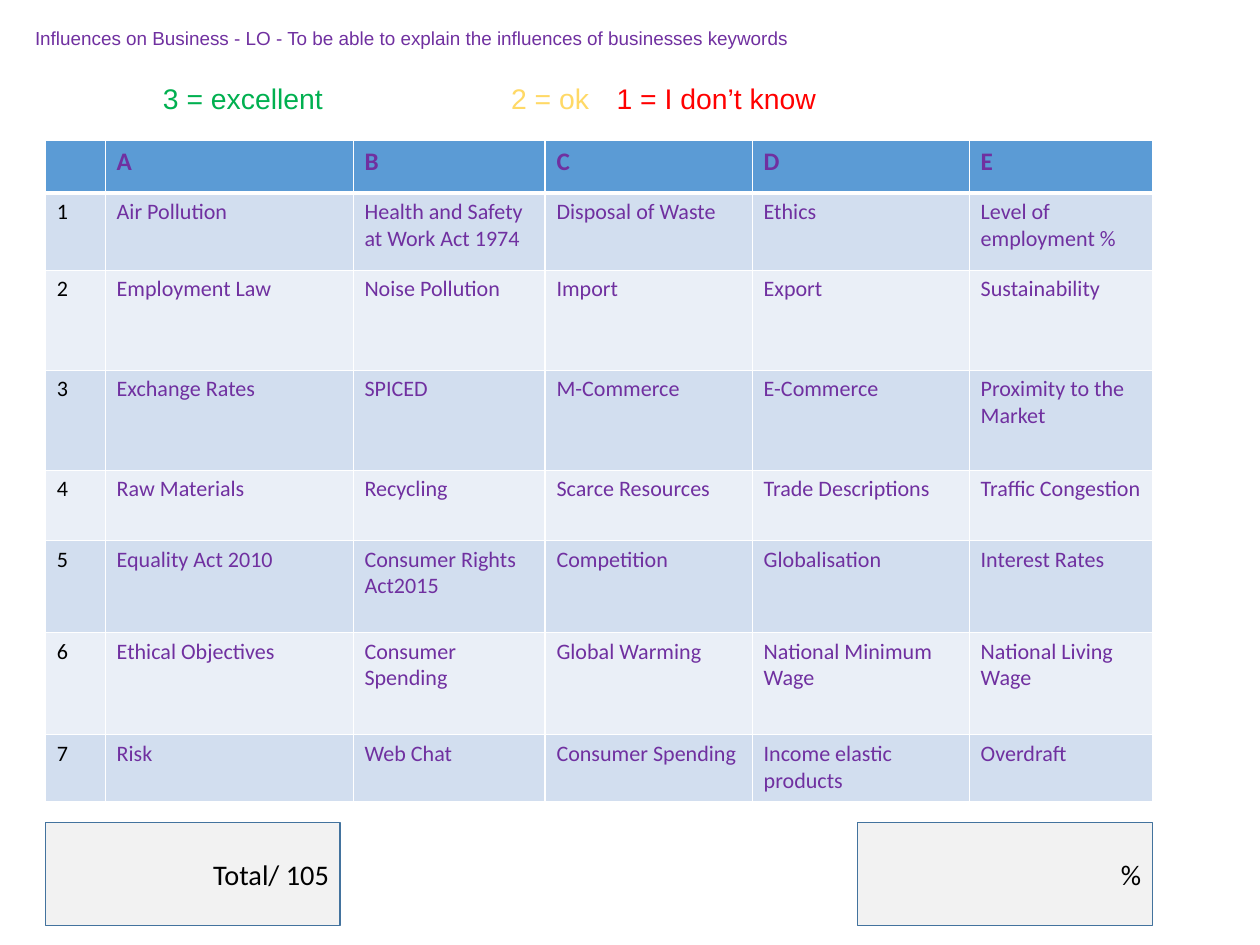
from dataclasses import dataclass

from lxml import etree
from pptx import Presentation
from pptx.dml.color import RGBColor
from pptx.enum.shapes import MSO_SHAPE
from pptx.enum.text import MSO_ANCHOR, MSO_AUTO_SIZE, PP_ALIGN
from pptx.oxml.ns import qn
from pptx.util import Cm, Pt

RECT = MSO_SHAPE.RECTANGLE
TOP, MIDDLE = MSO_ANCHOR.TOP, MSO_ANCHOR.MIDDLE
LEFT, RIGHT = PP_ALIGN.LEFT, PP_ALIGN.RIGHT
NO_FIT = MSO_AUTO_SIZE.NONE


@dataclass(frozen=True)
class Theme:
    heading_font: str = "Arial"
    body_font: str = "Calibri"
    purple: str = "7030A0"
    black: str = "000000"
    green: str = "00B050"
    yellow: str = "FFD966"
    red: str = "FF0000"
    white: str = "FFFFFF"
    header: str = "5B9BD5"
    bands: tuple = ("D2DEEF", "EAEFF7")
    box: str = "F2F2F2"
    box_line: str = "43739E"
    title_size: int = 12
    cell_size: int = 14
    header_size: int = 16
    large_size: int = 18


T = Theme()

# Content
TITLE = "Influences on Business - LO - To be able to explain the influences of businesses keywords"
SCORES = [
    ("3 = excellent\t\t ", T.green),
    ("2 = ok \t", T.yellow),
    ("1 = I don’t know", T.red),
]
KEYWORDS = [
    ("", "A", "B", "C", "D", "E"),
    ("1", "Air Pollution", "Health and Safety at Work Act 1974", "Disposal of Waste",
     "Ethics", "Level of employment %"),
    ("2", "Employment Law", "Noise Pollution", "Import", "Export", "Sustainability"),
    ("3", "Exchange Rates", "SPICED", "M-Commerce", "E-Commerce", "Proximity to the Market"),
    ("4", "Raw Materials", "Recycling", "Scarce Resources", "Trade Descriptions",
     "Traffic Congestion"),
    ("5", "Equality Act 2010", "Consumer Rights Act2015", "Competition", "Globalisation",
     "Interest Rates"),
    ("6", "Ethical Objectives", "Consumer Spending", "Global Warming",
     "National Minimum Wage", "National Living Wage"),
    ("7", "Risk", "Web Chat", "Consumer Spending", "Income elastic products", "Overdraft"),
]
RESULTS = ["Total/ 105", "%"]

# Layout in centimetres
COL_WIDTHS = [1.34, 5.55, 4.3, 4.64, 4.86, 4.1]
ROW_HEIGHTS = [1.17, 1.73, 2.24, 2.24, 1.57, 2.06, 2.29, 1.5]
TABLE_LEFT, TABLE_TOP = 1.02, 3.15
TABLE_WIDTH, TABLE_HEIGHT = sum(COL_WIDTHS), sum(ROW_HEIGHTS)
BOX_WIDTH, BOX_HEIGHT, BOX_TOP = 6.6, 2.31, 18.42
SCORE_TABS = [5.08, 7.62, 10.16]


def add_run(p, text, font, size, color, bold=False):
    r = p.add_run()
    r.text = text
    r.font.name, r.font.size, r.font.bold = font, Pt(size), bold
    r.font.color.rgb = RGBColor.from_string(color)


def add_tabs(p, stops):
    tabs = etree.SubElement(p._p.get_or_add_pPr(), qn("a:tabLst"))
    for stop in stops:
        etree.SubElement(tabs, qn("a:tab"), pos=str(Cm(stop)), algn="l")


def add_borders(cell, top, bottom):
    tcPr = cell._tc.get_or_add_tcPr()
    for side, width in (("L", 1), ("R", 1), ("T", top), ("B", bottom)):
        line = etree.SubElement(tcPr, qn(f"a:ln{side}"), w=str(Pt(width)))
        fill = etree.SubElement(line, qn("a:solidFill"))
        etree.SubElement(fill, qn("a:srgbClr"), val=T.white)


def add_title(s):
    sp = s.shapes.title
    sp.left, sp.top, sp.width, sp.height = Cm(0.53), Cm(0.48), Cm(22.86), Cm(0.77)
    tf = sp.text_frame
    tf.auto_size, tf.vertical_anchor, tf.word_wrap = NO_FIT, TOP, True
    p = tf.paragraphs[0]
    p.alignment = LEFT
    add_run(p, TITLE, T.heading_font, T.title_size, T.purple)


def add_scores(s):
    sp = s.shapes.add_textbox(Cm(3.4), Cm(1.7), Cm(21.39), Cm(1.02))
    sp.text_frame.word_wrap = True
    p = sp.text_frame.paragraphs[0]
    add_tabs(p, SCORE_TABS)
    for text, color in SCORES:
        add_run(p, text, T.heading_font, T.large_size, color)


def add_keywords(s):
    table = s.shapes.add_table(len(KEYWORDS), len(COL_WIDTHS), Cm(TABLE_LEFT), Cm(TABLE_TOP),
                               Cm(TABLE_WIDTH), Cm(TABLE_HEIGHT)).table
    for column, width in zip(table.columns, COL_WIDTHS):
        column.width = Cm(width)
    for i, (row, height) in enumerate(zip(KEYWORDS, ROW_HEIGHTS)):
        table.rows[i].height = Cm(height)
        header = i == 0
        fill = T.header if header else T.bands[(i - 1) % 2]
        size = T.header_size if header else T.cell_size
        for j, text in enumerate(row):
            cell = table.cell(i, j)
            add_borders(cell, top=3 if i == 1 else 1, bottom=3 if header else 1)
            cell.fill.solid()
            cell.fill.fore_color.rgb = RGBColor.from_string(fill)
            if text:
                color = T.purple if j else T.black
                add_run(cell.text_frame.paragraphs[0], text, T.body_font, size, color, header)


def add_results(s):
    # Boxes align with the two ends of the table
    lefts = (TABLE_LEFT, TABLE_LEFT + TABLE_WIDTH - BOX_WIDTH)
    for text, left in zip(RESULTS, lefts):
        sp = s.shapes.add_shape(RECT, Cm(left), Cm(BOX_TOP), Cm(BOX_WIDTH), Cm(BOX_HEIGHT))
        sp.shadow.inherit = False
        sp.fill.solid()
        sp.fill.fore_color.rgb = RGBColor.from_string(T.box)
        sp.line.color.rgb = RGBColor.from_string(T.box_line)
        sp.line.width = Pt(1)
        sp.text_frame.vertical_anchor = MIDDLE
        p = sp.text_frame.paragraphs[0]
        p.alignment = RIGHT
        add_run(p, text, T.body_font, T.large_size, T.black)


def main():
    prs = Presentation()
    prs.slide_width, prs.slide_height = Cm(28.22), Cm(21.16)
    s = prs.slides.add_slide(prs.slide_layouts[5])
    add_title(s)
    add_keywords(s)
    add_results(s)
    add_scores(s)
    prs.save("out.pptx")


if __name__ == "__main__":
    main()
